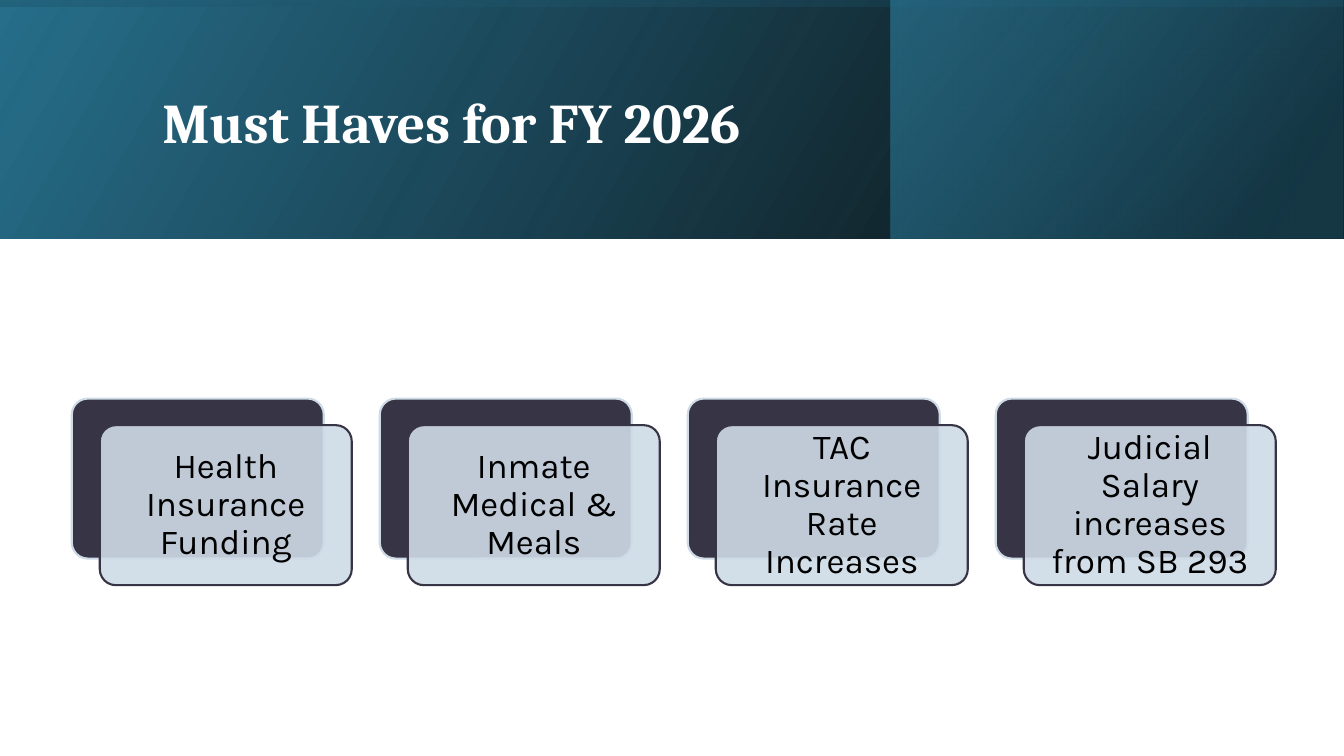
from lxml import etree
from pptx import Presentation
from pptx.dml.color import RGBColor
from pptx.enum.shapes import MSO_SHAPE
from pptx.enum.text import MSO_ANCHOR, PP_ALIGN
from pptx.oxml.ns import qn
from pptx.util import Pt

RECTANGLE, ROUNDED = MSO_SHAPE.RECTANGLE, MSO_SHAPE.ROUNDED_RECTANGLE
MIDDLE = MSO_ANCHOR.MIDDLE
LEFT, CENTER = PP_ALIGN.LEFT, PP_ALIGN.CENTER

COLORS = {
    "black": "000000",
    "white": "FFFFFF",
    "deep_teal": "1A4A5D",
    "teal": "276F8B",
    "sky": "3494BA",
    "plum": "373545",
    "mist": "CEDBE6",
}
TITLE_FONT, BODY_FONT = "Cambria", "Karla"

SLIDE_WIDTH, SLIDE_HEIGHT = 960, 540
BANNER_HEIGHT = 170.6
ACCENT_LEFT, ACCENT_WIDTH = 636.5, 322.8

CARDS = [
    "Health Insurance Funding",
    "Inmate Medical & Meals",
    "TAC Insurance Rate Increases",
    "Judicial Salary increases from SB 293",
]
CARD_LEFT, CARD_TOP, CARD_PITCH = 51.3, 284.7, 220
CARD_WIDTH, CARD_HEIGHT = 180, 114.3
CARD_SHIFT_X, CARD_SHIFT_Y = 20, 19


class SlideBuilder:
    def __init__(self, slide):
        self.shapes = slide.shapes

    def color(self, name):
        return RGBColor.from_string(COLORS[name])

    def shape(self, kind, left, top, width, height):
        shape = self.shapes.add_shape(kind, Pt(left), Pt(top), Pt(width), Pt(height))
        shape.shadow.inherit = False
        return shape

    def gradient(self, left, top, width, height, stops, angle, rotation=0):
        """Mirrored rectangle; stops are (position %, color, opacity %)."""
        box = self.shape(RECTANGLE, left, top, width, height)
        box.line.fill.background()
        box.rotation = rotation
        box.fill.gradient()
        properties = box._element.spPr
        properties.find(qn("a:xfrm")).set("flipH", "1")
        fill = properties.find(qn("a:gradFill"))
        fill.set("rotWithShape", "1")
        for child in list(fill):
            fill.remove(child)
        stop_list = etree.SubElement(fill, qn("a:gsLst"))
        for position, name, opacity in stops:
            stop = etree.SubElement(stop_list, qn("a:gs"), pos=str(position * 1000))
            tint = etree.SubElement(stop, qn("a:srgbClr"), val=COLORS[name])
            etree.SubElement(tint, qn("a:alpha"), val=str(opacity * 1000))
        etree.SubElement(fill, qn("a:lin"), ang=str(angle * 60000), scaled="0")

    def panel(self, left, top, fill, line, opacity=100):
        panel = self.shape(ROUNDED, left, top, CARD_WIDTH, CARD_HEIGHT)
        panel.adjustments[0] = 0.1
        panel.fill.solid()
        panel.fill.fore_color.rgb = self.color(fill)
        if opacity < 100:
            tint = panel._element.spPr.find(qn("a:solidFill"))[0]
            etree.SubElement(tint, qn("a:alpha"), val=str(opacity * 1000))
        panel.line.color.rgb = self.color(line)
        panel.line.width = Pt(1.5)
        return panel

    def set_text(self, shape, text, font, size, color, align, bold=False):
        frame = shape.text_frame
        frame.text = text
        frame.word_wrap = True
        frame.vertical_anchor = MIDDLE
        para = frame.paragraphs[0]
        para.alignment = align
        para.line_spacing = 0.9
        for span in para.runs:
            span.font.name = font
            span.font.size = Pt(size)
            span.font.bold = bold
            span.font.color.rgb = self.color(color)

    def title(self, text, left, top, width, height):
        box = self.shapes.add_textbox(Pt(left), Pt(top), Pt(width), Pt(height))
        self.set_text(box, text, TITLE_FONT, 40, "white", LEFT, bold=True)

    def card(self, text, left, top):
        self.panel(left, top, "plum", "mist")
        front = self.panel(left + CARD_SHIFT_X, top + CARD_SHIFT_Y, "mist", "plum", 90)
        self.set_text(front, text, BODY_FONT, 25, "black", CENTER)
        frame = front.text_frame
        frame.margin_left = frame.margin_right = Pt(7.2)
        frame.margin_top = frame.margin_bottom = Pt(7.2)


def main():
    deck = Presentation()
    deck.slide_width, deck.slide_height = Pt(SLIDE_WIDTH), Pt(SLIDE_HEIGHT)
    page = SlideBuilder(deck.slides.add_slide(deck.slide_layouts[6]))

    # Banner: base, right accent, and a turned overlay across the full width
    page.gradient(0, 0, SLIDE_WIDTH, BANNER_HEIGHT,
                  [(0, "black", 96), (100, "teal", 100)], 330)
    page.gradient(ACCENT_LEFT, 0, ACCENT_WIDTH, BANNER_HEIGHT,
                  [(19, "deep_teal", 68), (100, "sky", 48)], 320)
    inset = (SLIDE_WIDTH - BANNER_HEIGHT) / 2
    page.gradient(inset, -inset, BANNER_HEIGHT, SLIDE_WIDTH,
                  [(23, "teal", 16), (99, "black", 45)], 350, rotation=270)
    page.title("Must Haves for FY 2026", 109, 27.4, 765, 124)

    # Row of cards
    for index, text in enumerate(CARDS):
        page.card(text, CARD_LEFT + index * CARD_PITCH, CARD_TOP)

    deck.save("out.pptx")


if __name__ == "__main__":
    main()
